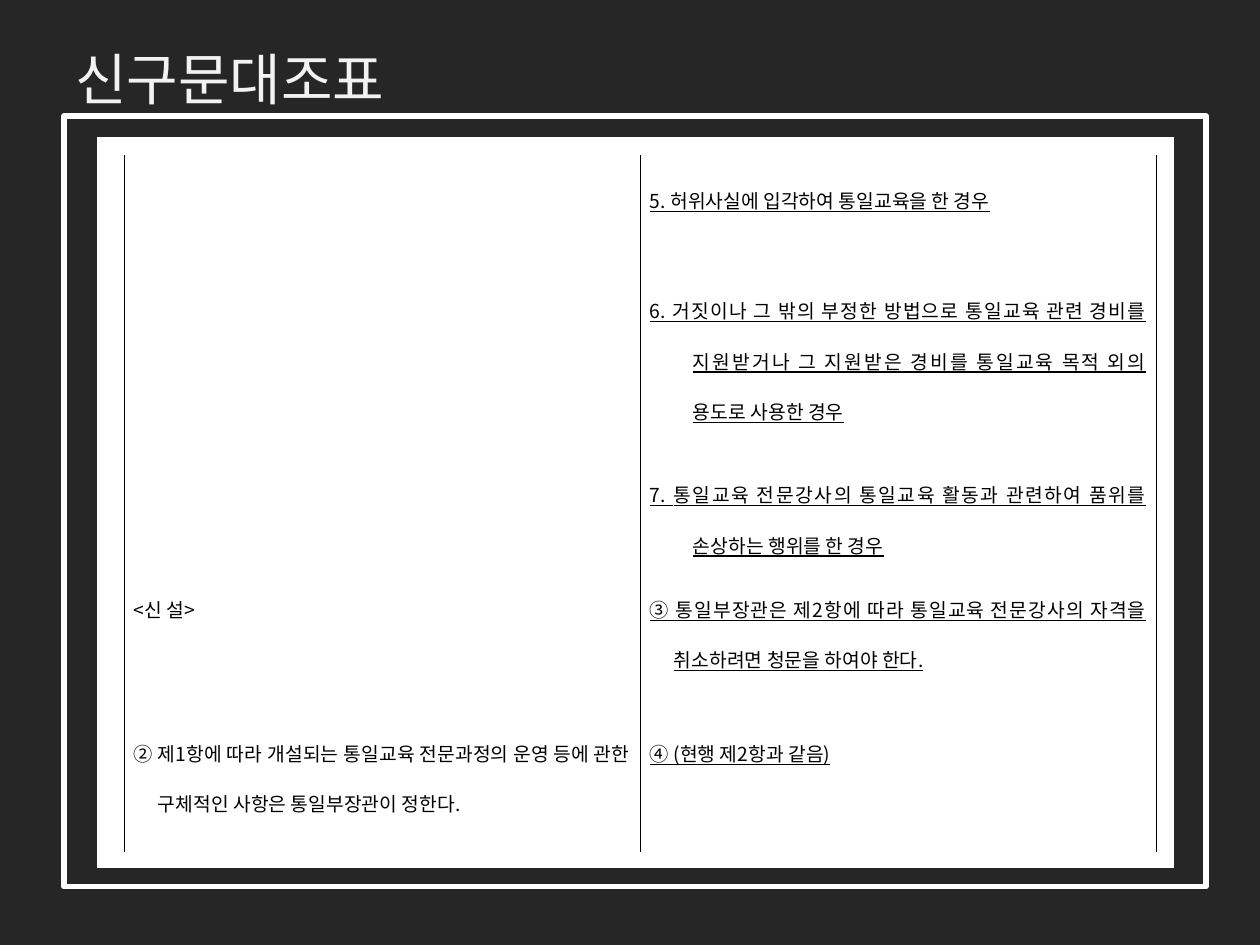
from pptx import Presentation
from pptx.dml.color import RGBColor
from pptx.enum.shapes import MSO_SHAPE as Shape
from pptx.enum.text import MSO_ANCHOR as Anchor, PP_ALIGN as Align
from pptx.oxml.ns import qn
from pptx.util import Emu, Pt
from lxml.etree import SubElement

DARK = RGBColor(0x26, 0x26, 0x26)
WHITE = RGBColor(0xFF, 0xFF, 0xFF)
PALE = RGBColor(0xF2, 0xF2, 0xF2)
BLACK = RGBColor(0, 0, 0)
EMU_PER_PX = 914400 / 126
FONT = "Noto Sans CJK KR"

ITEM_INDENT = 43
CLAUSE_INDENT = 24
ROWS = [
    (110, ITEM_INDENT, "", "5. 허위사실에 입각하여 통일교육을 한 경우"),
    (184, ITEM_INDENT, "", "6. 거짓이나 그 밖의 부정한 방법으로 통일교육 관련 경비를 "
     "지원받거나 그 지원받은 경비를 통일교육 목적 외의 용도로 사용한 경우"),
    (115, ITEM_INDENT, "", "7. 통일교육 전문강사의 통일교육 활동과 관련하여 품위를 "
     "손상하는 행위를 한 경우"),
    (144, CLAUSE_INDENT, "<신 설>", "③ 통일부장관은 제2항에 따라 통일교육 전문강사의 자격을 "
     "취소하려면 청문을 하여야 한다."),
    (144, CLAUSE_INDENT, "② 제1항에 따라 개설되는 통일교육 전문과정의 운영 등에 "
     "관한 구체적인 사항은 통일부장관이 정한다.", "④ (현행 제2항과 같음)"),
]


def px(value):
    return Emu(round(value * EMU_PER_PX))


class SlideBuilder:
    def __init__(self, slide):
        self.slide = slide

    def add_run(self, paragraph, text, size, color, underline=False):
        run = paragraph.add_run()
        run.text = text
        font = run.font
        font.name = FONT
        font.size = Pt(size)
        font.color.rgb = color
        font.underline = underline
        SubElement(font._element, qn("a:ea"), typeface=FONT)

    def rectangle(self, left, top, width, height, fill, line, line_width):
        shape = self.slide.shapes.add_shape(
            Shape.RECTANGLE, px(left), px(top), px(width), px(height))
        shape.shadow.inherit = False
        if fill is None:
            shape.fill.background()
        else:
            shape.fill.solid()
            shape.fill.fore_color.rgb = fill
        shape.line.color.rgb = line
        shape.line.width = Pt(line_width)
        SubElement(shape.line._get_or_add_ln(), qn("a:round"))

    def title(self, left, top, width, height, text):
        box = self.slide.shapes.add_textbox(px(left), px(top), px(width), px(height))
        frame = box.text_frame
        frame.word_wrap = True
        frame.vertical_anchor = Anchor.MIDDLE
        self.add_run(frame.paragraphs[0], text, 32, PALE)

    def borders(self, cell):
        properties = cell._tc.get_or_add_tcPr()
        for position, side in enumerate(("lnL", "lnR", "lnT", "lnB")):
            line = SubElement(properties, qn(f"a:{side}"), w=str(Pt(0.28)))
            if side in ("lnL", "lnR"):
                fill = SubElement(line, qn("a:solidFill"))
                SubElement(fill, qn("a:srgbClr"), val=str(BLACK))
            else:
                SubElement(line, qn("a:noFill"))
            properties.insert(position, line)

    def cell(self, cell, text, indent, underline):
        cell.fill.background()
        self.borders(cell)
        cell.margin_left = cell.margin_right = px(10)
        cell.margin_top = cell.margin_bottom = px(9)
        cell.vertical_anchor = Anchor.TOP
        if not text:
            return
        paragraph = cell.text_frame.paragraphs[0]
        paragraph.alignment = Align.JUSTIFY
        paragraph.line_spacing = 1.8
        properties = paragraph._p.get_or_add_pPr()
        properties.set("marL", str(px(indent)))
        properties.set("indent", str(-px(indent)))
        self.add_run(paragraph, text, 11, BLACK, underline)

    def comparison_table(self, left, top, column_width, rows):
        height = sum(row[0] for row in rows)
        table = self.slide.shapes.add_table(
            len(rows), 2, px(left), px(top), px(2 * column_width), px(height)).table
        table.first_row = False
        table.horz_banding = False
        for column in table.columns:
            column.width = px(column_width)
        for index, (row_height, indent, current, revised) in enumerate(rows):
            table.rows[index].height = px(row_height)
            self.cell(table.cell(index, 0), current, indent, False)
            self.cell(table.cell(index, 1), revised, indent, True)


def main():
    presentation = Presentation()
    presentation.slide_width = px(1260)
    presentation.slide_height = px(945)
    builder = SlideBuilder(presentation.slides.add_slide(presentation.slide_layouts[6]))
    builder.rectangle(0, 0, 1260, 945, DARK, DARK, 2)
    builder.title(63, 37, 1134, 83, "신구문대조표")
    builder.rectangle(64, 116, 1142, 771, None, WHITE, 3)
    builder.rectangle(95, 135, 1081, 735, WHITE, DARK, 2)
    builder.comparison_table(124, 155, 516, ROWS)
    presentation.save("out.pptx")


if __name__ == "__main__":
    main()
